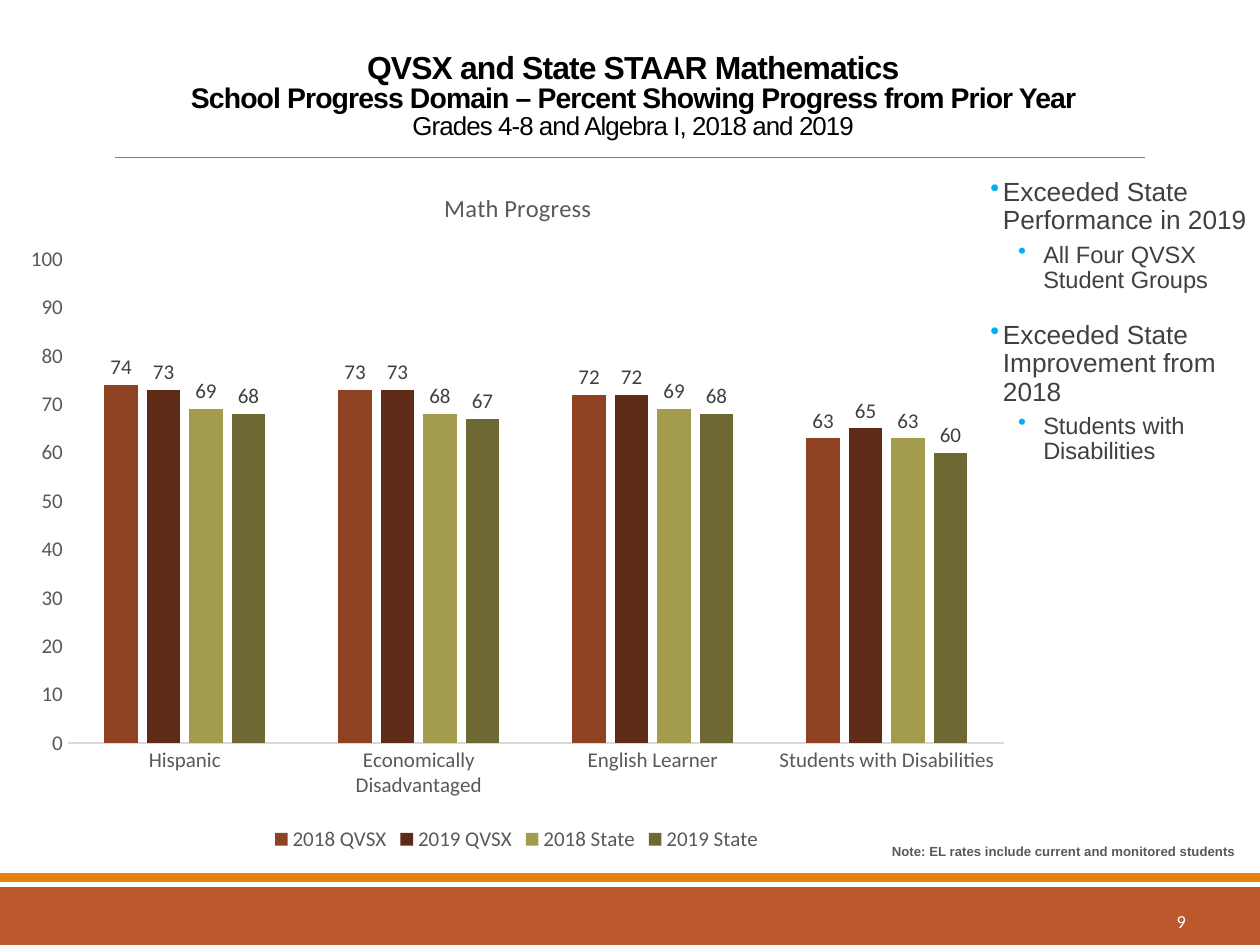
import pptx
import pptx.chart.data
import pptx.dml.color
import pptx.enum.chart
import pptx.enum.shapes
import pptx.enum.text
import pptx.oxml
import pptx.oxml.ns
import pptx.util
from lxml import etree

COLUMNS, ROWS = 100, 75
COLORS = {
    "footer": "BD582C", "stripe": "E48312", "rule": "808080", "axis": "D9D9D9",
    "white": "FFFFFF", "black": "000000", "muted": "595959", "body": "404040",
    "bullet": "00B0F0",
}
SERIES = [
    ("2018 QVSX", (74, 73, 72, 63), "8E4221"),
    ("2019 QVSX", (73, 73, 72, 65), "5E2C16"),
    ("2018 State", (69, 68, 69, 63), "A39B4E"),
    ("2019 State", (68, 67, 68, 60), "6D6834"),
]
CATEGORIES = ["Hispanic", "Economically Disadvantaged", "English Learner",
              "Students with Disabilities"]
TITLE_LINES = [
    ("QVSX and State STAAR Mathematics", 18.2, True),
    ("School Progress Domain – Percent Showing Progress from Prior Year", 16.2, True),
    ("Grades 4-8 and Algebra I, 2018 and 2019", 14.8, False),
]
FINDINGS = [
    ("Exceeded State Performance in 2019", "All Four QVSX Student Groups"),
    ("Exceeded State Improvement from 2018", "Students with Disabilities"),
]
ALIGN = pptx.enum.text.PP_ALIGN
ANCHOR = pptx.enum.text.MSO_ANCHOR


def rgb(name):
    return pptx.dml.color.RGBColor.from_string(COLORS.get(name, name))


def style_font(font, size, color, face="Calibri", bold=False):
    font.size = pptx.util.Pt(size)
    font.name = face
    font.bold = bold
    font.color.rgb = rgb(color)


def add_run(paragraph, text, size=12, color="black", face="Arial", bold=False, spacing=0):
    run = paragraph.add_run()
    run.text = text
    style_font(run.font, size, color, face, bold)
    if spacing:
        run.font._element.set("spc", str(round(spacing * 100)))


def set_bullet(paragraph, indent, hanging):
    properties = paragraph._p.get_or_add_pPr()
    properties.set("marL", str(pptx.util.Inches(indent)))
    properties.set("indent", str(-pptx.util.Inches(hanging)))
    color = etree.SubElement(properties, pptx.oxml.ns.qn("a:buClr"))
    etree.SubElement(color, pptx.oxml.ns.qn("a:srgbClr"), val=COLORS["bullet"])
    etree.SubElement(properties, pptx.oxml.ns.qn("a:buChar"), char="•")


def place_in_chart(parent, successors, inner=False, **shares):
    """Fix a chart part's position as shares of the chart's size."""
    for old in parent.findall(pptx.oxml.ns.qn("c:layout")):
        parent.remove(old)
    layout = pptx.oxml.parse_xml(f"<c:layout {pptx.oxml.ns.nsdecls('c')}><c:manualLayout/></c:layout>")
    settings = {"layoutTarget": "inner"} if inner else {}
    settings.update(xMode="edge", yMode="edge", **shares)
    for key, value in settings.items():
        etree.SubElement(layout[0], pptx.oxml.ns.qn(f"c:{key}"), val=str(value))
    parent.insert_element_before(layout, *successors)


class SlideBuilder:
    """Adds elements to one slide, placed in grid columns and rows."""

    def __init__(self, presentation):
        self.cell_width = presentation.slide_width / COLUMNS
        self.cell_height = presentation.slide_height / ROWS
        self.slide = presentation.slides.add_slide(presentation.slide_layouts[6])
        self.shapes = self.slide.shapes

    def box(self, left, top, width, height):
        return (round(left * self.cell_width), round(top * self.cell_height),
                round(width * self.cell_width), round(height * self.cell_height))

    def bar(self, *cells, color):
        shape = self.shapes.add_shape(pptx.enum.shapes.MSO_SHAPE.RECTANGLE, *self.box(*cells))
        shape.shadow.inherit = False
        shape.fill.solid()
        shape.fill.fore_color.rgb = rgb(color)
        shape.line.fill.background()

    def rule(self, left, right, row):
        x, y, width, _ = self.box(left, row, right - left, 0)
        line = self.shapes.add_connector(
            pptx.enum.shapes.MSO_CONNECTOR.STRAIGHT, x, y, x + width, y)
        line.line.color.rgb = rgb("rule")
        line.line.width = pptx.util.Pt(0.5)
        etree.SubElement(line._element.spPr, pptx.oxml.ns.qn("a:effectLst"))

    def text_frame(self, *cells, anchor=ANCHOR.TOP):
        frame = self.shapes.add_textbox(*self.box(*cells)).text_frame
        frame.word_wrap = True
        frame.vertical_anchor = anchor
        return frame

    def label(self, text, *cells, align=ALIGN.LEFT, anchor=ANCHOR.TOP, **text_format):
        paragraph = self.text_frame(*cells, anchor=anchor).paragraphs[0]
        paragraph.alignment = align
        add_run(paragraph, text, **text_format)

    def heading(self, lines, *cells):
        paragraph = self.text_frame(*cells, anchor=ANCHOR.BOTTOM).paragraphs[0]
        paragraph.alignment = ALIGN.CENTER
        paragraph.line_spacing = 0.85
        for index, (text, size, bold) in enumerate(lines):
            if index:
                paragraph.add_line_break()
            add_run(paragraph, text, size=size, bold=bold, spacing=-0.5)

    def bullets(self, groups, *cells):
        frame = self.text_frame(*cells)
        frame.margin_left = frame.margin_right = 0
        levels = [(15, 12, 2, 0.1, 0.1), (13.5, 2, 4, 0.42, 0.2)]
        paragraph = None
        for group in groups:
            for level, text in enumerate(group):
                paragraph = frame.add_paragraph() if paragraph else frame.paragraphs[0]
                size, before, after, indent, hanging = levels[level]
                paragraph.level = level
                paragraph.line_spacing = 0.9
                paragraph.space_before = pptx.util.Pt(before)
                paragraph.space_after = pptx.util.Pt(after)
                set_bullet(paragraph, indent, hanging)
                add_run(paragraph, text, size=size, color="body")

    def column_chart(self, title, *cells):
        data = pptx.chart.data.CategoryChartData()
        data.categories = CATEGORIES
        for name, values, _ in SERIES:
            data.add_series(name, values)
        chart = self.shapes.add_chart(
            pptx.enum.chart.XL_CHART_TYPE.COLUMN_CLUSTERED, *self.box(*cells), data).chart
        style_font(chart.font, 12, "black")
        chart.has_title = True
        add_run(chart.chart_title.text_frame.paragraphs[0], title,
                size=14, color="muted", face="Calibri")
        place_in_chart(chart.chart_title._element,
                       ("c:overlay", "c:spPr", "c:txPr"), x=0.424, y=0.028)
        chart.has_legend = True
        chart.legend.position = pptx.enum.chart.XL_LEGEND_POSITION.BOTTOM
        chart.legend.include_in_layout = False
        style_font(chart.legend.font, 12, "muted")

        for axis in (chart.category_axis, chart.value_axis):
            axis.major_tick_mark = axis.minor_tick_mark = pptx.enum.chart.XL_TICK_MARK.NONE
            axis.has_major_gridlines = False
            style_font(axis.tick_labels.font, 12, "muted")
        chart.category_axis.format.line.color.rgb = rgb("axis")
        chart.category_axis.format.line.width = pptx.util.Pt(0.75)
        chart.value_axis.format.line.fill.background()
        chart.value_axis.minimum_scale, chart.value_axis.maximum_scale = 0, 100
        chart.value_axis.major_unit = 10

        plot = chart.plots[0]
        plot.gap_width, plot.overlap, plot.vary_by_categories = 219, -27, False
        for series, (_, _, color) in zip(plot.series, SERIES):
            series.format.fill.solid()
            series.format.fill.fore_color.rgb = rgb(color)
            labels = series.data_labels
            labels.show_value = True
            labels.position = pptx.enum.chart.XL_LABEL_POSITION.OUTSIDE_END
            style_font(labels.font, 12, "body")
        place_in_chart(chart._chartSpace.chart.plotArea, ("c:barChart",), inner=True,
                       x=0.057, y=0.133, w=0.924, h=0.702)


def main():
    presentation = pptx.Presentation()
    presentation.slide_width = pptx.util.Inches(10)
    presentation.slide_height = pptx.util.Inches(7.5)
    builder = SlideBuilder(presentation)
    builder.bar(0, 70.4, COLUMNS, ROWS - 70.4, color="footer")
    builder.bar(0, 69.3, COLUMNS, 0.7, color="stripe")
    builder.rule(9.1, 90.9, 12.5)
    builder.label("9", 84.3, 71.1, 10.8, 4, align=ALIGN.RIGHT, anchor=ANCHOR.MIDDLE,
                  size=10.5, color="white", face="Calibri")
    builder.heading(TITLE_LINES, 9, 3.1, 82.5, 8.6)
    builder.label("Note: EL rates include current and monitored students",
                  69.8, 66.4, 30.2, 3.5, size=7.5, color="muted", bold=True)
    builder.column_chart("Math Progress", 0.8, 13.3, 80.4, 54.7)
    builder.bullets(FINDINGS, 78.6, 13.7, 21.2, 43.8)
    presentation.save("out.pptx")


if __name__ == "__main__":
    main()
